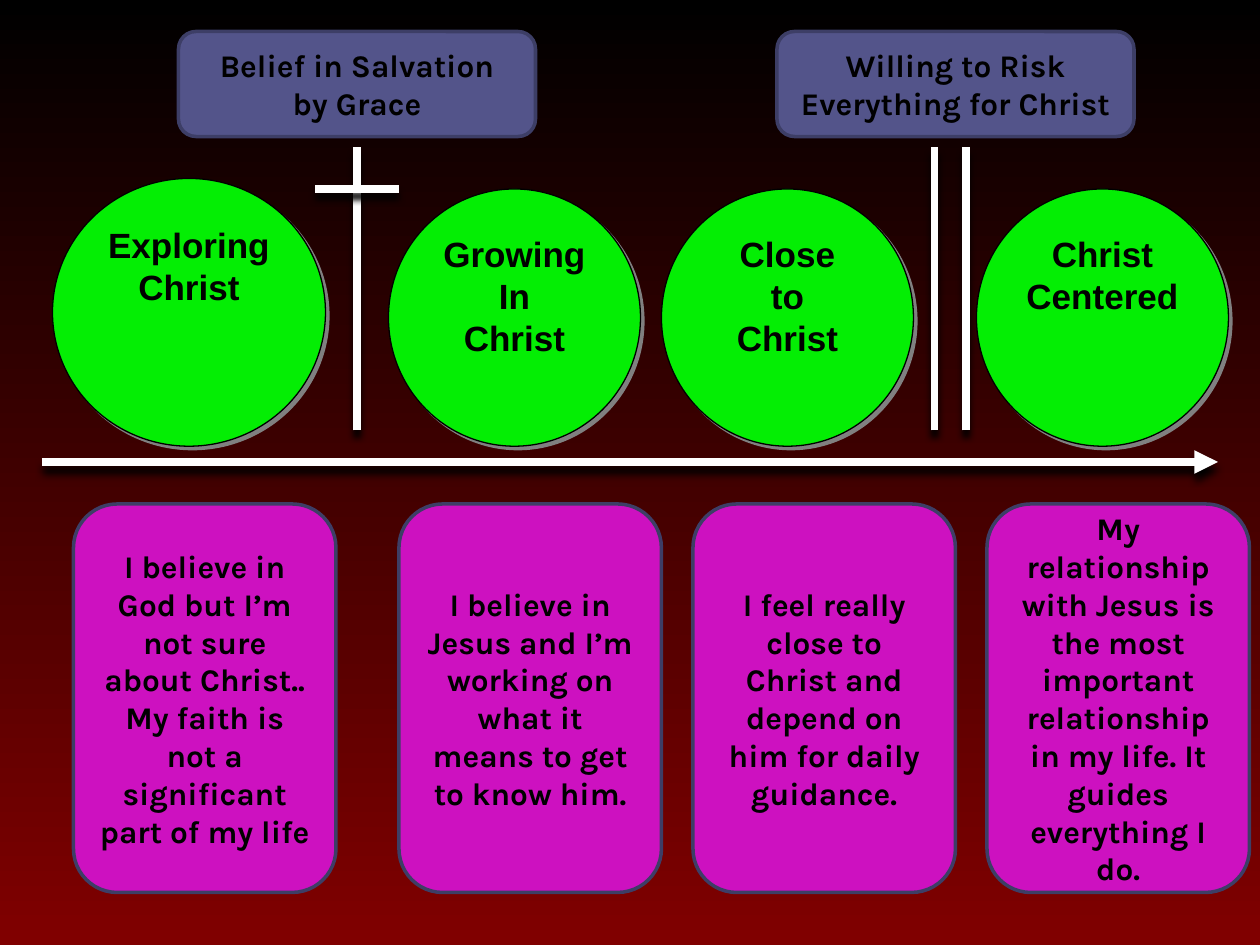
from lxml.etree import SubElement
from pptx import Presentation
from pptx.dml.color import RGBColor
from pptx.enum.shapes import MSO_CONNECTOR, MSO_SHAPE
from pptx.enum.text import MSO_ANCHOR, PP_ALIGN
from pptx.oxml.ns import qn
from pptx.util import Pt

BLACK = RGBColor(0x00, 0x00, 0x00)
WHITE = RGBColor(0xFF, 0xFF, 0xFF)
GRAY = RGBColor(0x80, 0x80, 0x80)
MAROON = RGBColor(0x80, 0x00, 0x00)
GREEN = RGBColor(0x04, 0xEE, 0x04)
MAGENTA = RGBColor(0xCD, 0x11, 0xC0)
INDIGO = RGBColor(0x53, 0x54, 0x8A)
NAVY = RGBColor(0x3D, 0x3E, 0x66)

STAGES = [
    ((30, 102, 156, 153), ["Exploring\vChrist"]),
    ((222, 108, 144, 147), ["Growing", "In", "Christ"]),
    ((378, 108, 144, 147), ["Close", "to", "Christ"]),
    ((558, 108, 144, 147), ["Christ", "Centered"]),
]
STATEMENTS = [
    (42, "I believe in God but I’m not sure about Christ.. My faith is not a significant part of my life"),
    (228, "I believe in Jesus and I’m working on what it means to get to know him."),
    (396, "I feel really close to Christ and depend on him for daily guidance."),
    (564, "My relationship with Jesus is the most important relationship in my life. It guides everything I do."),
]
MILESTONES = [
    (102, ["Belief in Salvation", "by Grace"]),
    (444, ["Willing to Risk Everything for Christ"]),
]
BARRIERS = [(204, 246, 204, 84), (534, 246, 534, 84), (552, 246, 552, 84), (180, 108, 228, 108)]


class SlideBuilder:
    """Draw the elements of a spiritual growth slide in one shared style."""

    circle_font = {"name": "Arial", "size": Pt(20), "bold": True}
    box_font = {"name": "Karla", "size": Pt(18), "bold": True}

    def __init__(self, slide):
        self.slide = slide

    def background(self, bottom, top):
        fill = self.slide.background.fill
        fill.gradient()
        fill.gradient_angle = 90
        for stop, color, position in zip(fill.gradient_stops, (bottom, top), (0, 1)):
            stop.color.rgb = color
            stop.position = position

    def shadow(self, effects, color, blur, distance, angle):
        outer = SubElement(effects, qn("a:outerShdw"), blurRad=str(Pt(blur)), dist=str(Pt(distance)),
                           dir=str(angle * 60000), algn="ctr", rotWithShape="0")
        SubElement(outer, qn("a:srgbClr"), val=str(color))

    def line(self, *ends, arrow=False):
        connector = self.slide.shapes.add_connector(MSO_CONNECTOR.STRAIGHT, *map(Pt, ends))
        connector.line.color.rgb = WHITE
        connector.line.width = Pt(4.5)
        properties = connector._element.spPr
        if arrow:
            SubElement(properties.find(qn("a:ln")), qn("a:tailEnd"), type="triangle")
        self.shadow(SubElement(properties, qn("a:effectLst")), BLACK, 4, 4, 90)

    def shape(self, kind, bounds, fill, outline, width, paragraphs, font, anchor):
        shape = self.slide.shapes.add_shape(kind, *map(Pt, bounds))
        shape.shadow.inherit = False
        shape.fill.solid()
        shape.fill.fore_color.rgb = fill
        shape.line.color.rgb = outline
        shape.line.width = Pt(width)
        frame = shape.text_frame
        frame.word_wrap = True
        frame.vertical_anchor = anchor
        frame.text = "\n".join(paragraphs)
        for paragraph in frame.paragraphs:
            paragraph.alignment = PP_ALIGN.CENTER
            for run in paragraph.runs:
                run.font.color.rgb = BLACK
                for name, value in font.items():
                    setattr(run.font, name, value)
        return shape

    def circle(self, bounds, paragraphs):
        shape = self.shape(MSO_SHAPE.OVAL, bounds, GREEN, BLACK, 0.75, paragraphs,
                           self.circle_font, MSO_ANCHOR.TOP)
        self.shadow(shape._element.spPr.find(qn("a:effectLst")), GRAY, 0, 2.8, 45)

    def box(self, bounds, fill, paragraphs):
        self.shape(MSO_SHAPE.ROUNDED_RECTANGLE, bounds, fill, NAVY, 2, paragraphs,
                   self.box_font, MSO_ANCHOR.MIDDLE)


def main():
    presentation = Presentation()
    presentation.slide_width = Pt(720)
    presentation.slide_height = Pt(540)
    builder = SlideBuilder(presentation.slides.add_slide(presentation.slide_layouts[6]))
    builder.background(MAROON, BLACK)
    builder.line(24, 264, 696, 264, arrow=True)
    for bounds, paragraphs in STAGES:
        builder.circle(bounds, paragraphs)
    for ends in BARRIERS:
        builder.line(*ends)
    for left, statement in STATEMENTS:
        builder.box((left, 288, 150, 222), MAGENTA, [statement])
    for left, paragraphs in MILESTONES:
        builder.box((left, 18, 204, 60), INDIGO, paragraphs)
    presentation.save("out.pptx")


if __name__ == "__main__":
    main()
